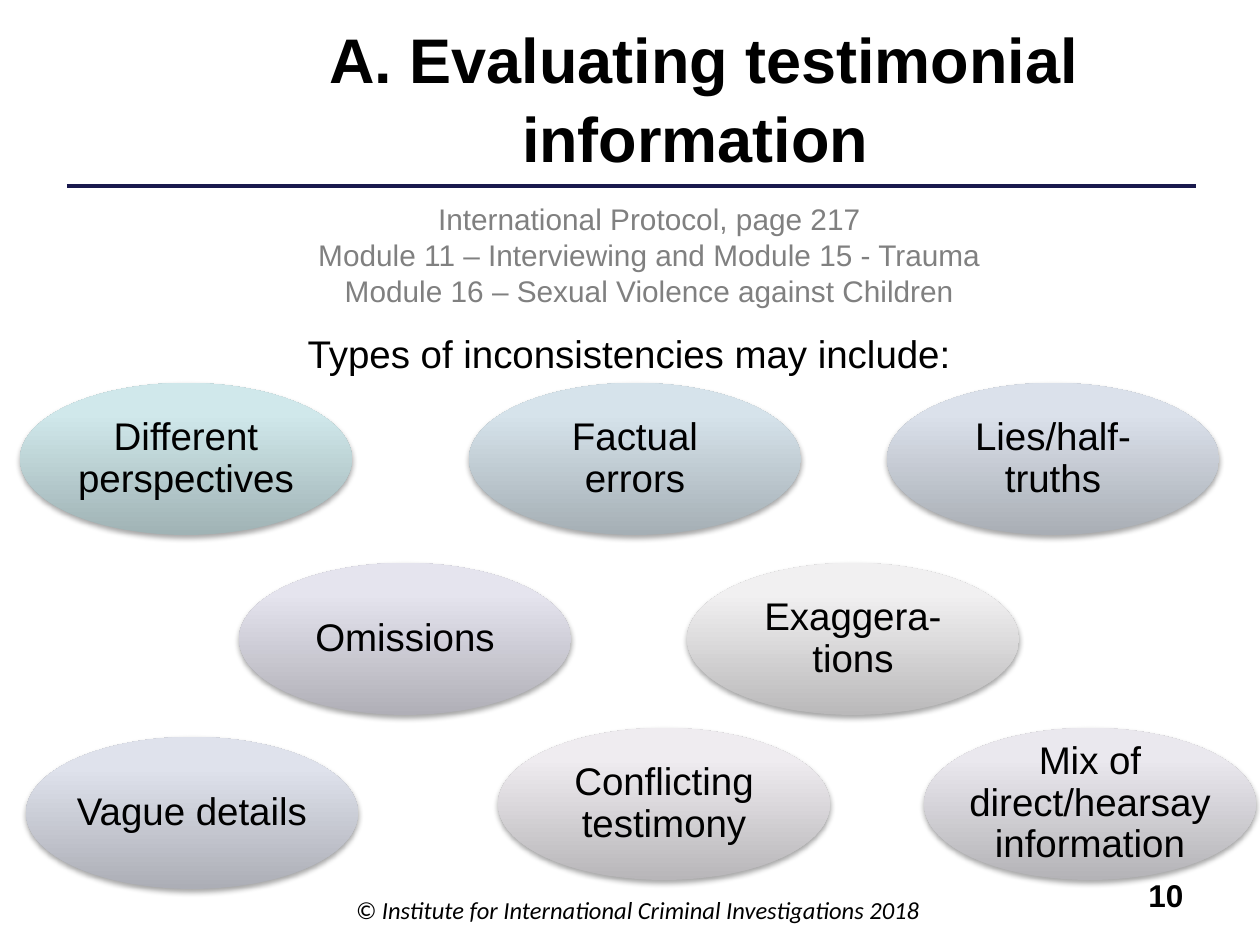
from copy import deepcopy
from dataclasses import dataclass

from lxml import etree
from pptx import Presentation
from pptx.dml.color import RGBColor
from pptx.enum.shapes import MSO_CONNECTOR, MSO_SHAPE
from pptx.enum.text import MSO_ANCHOR, MSO_AUTO_SIZE, PP_ALIGN
from pptx.oxml import parse_xml
from pptx.oxml.ns import nsdecls, qn
from pptx.util import Emu, Pt


@dataclass(frozen=True)
class Theme:
    font: str = "Arial"
    footer_font: str = "Calibri"
    text: str = "000000"
    muted: str = "808080"
    rule: str = "19194D"
    title_size: int = 36
    body_size: int = 22
    number_size: int = 18
    reference_size: int = 17
    footer_size: int = 14


THEME = Theme()
OVAL_W, OVAL_H = 332, 152

REFERENCES = [
    "International Protocol, page 217",
    "Module 11 – Interviewing and Module 15 - Trauma",
    "Module 16 – Sexual Violence against Children",
]

# text, left, top, side inset, gradient colours from bottom to top
INCONSISTENCIES = [
    ("Different perspectives", 20, 383, 9, ("A0B3B5", "D0E8EB", "D1EAEC")),
    ("Factual errors", 469, 383, 9, ("A5AFB5", "D6E3EB", "D6E5ED")),
    ("Lies/half-truths", 887, 383, 9, ("A9AEB5", "DBE1EB", "DCE2ED")),
    ("Vague details", 26, 737, 0, ("ACAEB6", "DFE2EC", "E0E3ED")),
    ("Omissions", 239, 563, 9, ("B0AFB7", "E5E4EE", "E6E4EF")),
    ("Mix of direct/hearsay information", 924, 728, -13,
     ("B4B3B7", "EAE8EE", "EBE9EF")),
    ("Conflicting testimony", 498, 728, 0, ("B8B6B9", "EFECF0", "F0EDF1")),
    ("Exaggera-tions", 687, 563, 9, ("BAB9BA", "F1F0F1", "F3F1F3")),
]


def px(n):
    return Emu(round(n * 914400 / 126))


def place(sp, x, y, w, h):
    sp.left, sp.top, sp.width, sp.height = px(x), px(y), px(w), px(h)


def write(tf, lines, size, color=THEME.text, font=THEME.font, bold=False,
          italic=False, align=PP_ALIGN.CENTER, spacing=None):
    tf.word_wrap = True
    for i, line in enumerate(lines):
        p = tf.add_paragraph() if i else tf.paragraphs[0]
        p.text = line
        p.alignment = align
        p.line_spacing = spacing
        p.font.name = font
        p.font.size = Pt(size)
        p.font.bold = bold
        p.font.italic = italic
        p.font.color.rgb = RGBColor.from_string(color)


def add_title(s, text):
    sp = s.shapes.title
    place(sp, 203, 37, 1002, 118)
    tf = sp.text_frame
    tf.auto_size = MSO_AUTO_SIZE.NONE
    tf.vertical_anchor = MSO_ANCHOR.MIDDLE
    write(tf, [text], THEME.title_size, bold=True, spacing=1.05)


def add_text(s, box, lines, size, **style):
    sp = s.shapes.add_textbox(*map(px, box))
    write(sp.text_frame, lines, size, **style)


def add_rule(s, x1, x2, y):
    line = s.shapes.add_connector(MSO_CONNECTOR.STRAIGHT, px(x1), px(y), px(x2), px(y))
    line.line.color.rgb = RGBColor.from_string(THEME.rule)
    line.line.width = Pt(2.5)
    etree.SubElement(line._element.spPr, qn("a:effectLst"))


def fill_gradient(sp, colors):
    sp.fill.gradient()
    sp.fill.gradient_angle = 90
    stops = sp._element.spPr.find(".//" + qn("a:gsLst"))
    stops.append(deepcopy(stops[-1]))
    for stop, position, color in zip(sp.fill.gradient_stops, (0, 0.8, 1), colors):
        stop.position = position
        stop.color.rgb = RGBColor.from_string(color)


def add_shadow(sp):
    sp._element.spPr.append(parse_xml(
        f'<a:effectLst {nsdecls("a")}>'
        f'<a:outerShdw blurRad="{Pt(3.1)}" dist="{Pt(1.8)}" dir="5400000" rotWithShape="0">'
        '<a:srgbClr val="000000"><a:alpha val="35000"/></a:srgbClr>'
        '</a:outerShdw></a:effectLst>'))


def add_oval(s, text, x, y, inset, colors):
    sp = s.shapes.add_shape(MSO_SHAPE.OVAL, px(x), px(y), px(OVAL_W), px(OVAL_H))
    fill_gradient(sp, colors)
    sp.line.fill.background()
    add_shadow(sp)
    tf = sp.text_frame
    tf.margin_left = tf.margin_right = px(inset)
    tf.margin_top = tf.margin_bottom = 0
    tf.vertical_anchor = MSO_ANCHOR.MIDDLE
    write(tf, [text], THEME.body_size, spacing=0.9)


def main():
    prs = Presentation()
    prs.slide_width, prs.slide_height = px(1260), px(945)
    s = prs.slides.add_slide(prs.slide_layouts[5])

    # Heading
    add_rule(s, 67, 1196, 186)
    add_title(s, "A. Evaluating testimonial information ")
    add_text(s, (94, 195, 1111, 121), REFERENCES, THEME.reference_size,
             color=THEME.muted)
    add_text(s, (54, 324, 1150, 59), ["Types of inconsistencies may include:"],
             THEME.body_size)

    # Types of inconsistencies
    for item in INCONSISTENCIES:
        add_oval(s, *item)

    # Footer and page number
    add_text(s, (323, 889, 630, 50),
             ["© Institute for International Criminal Investigations 2018"],
             THEME.footer_size, font=THEME.footer_font, italic=True)
    add_text(s, (1136, 870, 124, 50), ["10"], THEME.number_size, bold=True,
             align=PP_ALIGN.LEFT)

    prs.save("out.pptx")


if __name__ == "__main__":
    main()
